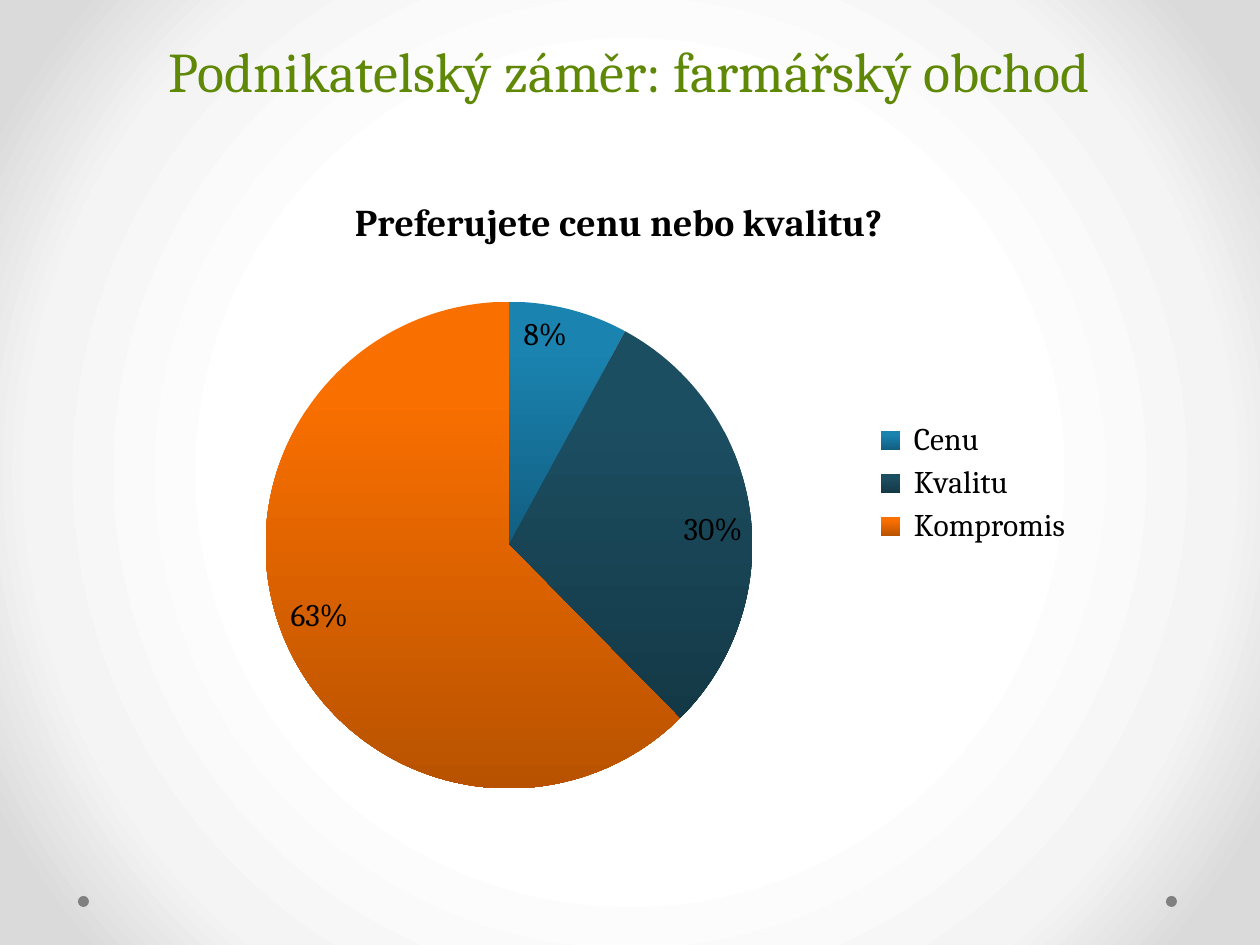
import copy
from dataclasses import dataclass

import pptx
import pptx.chart.data
import pptx.dml.color
import pptx.enum.chart
import pptx.enum.shapes
import pptx.enum.text
import pptx.oxml
import pptx.oxml.ns
import pptx.util

PX = 914400 // 126


@dataclass(frozen=True)
class Theme:
    font: str = "Cambria"
    green: str = "5E8805"
    black: str = "000000"
    grey: str = "808080"
    back: tuple = ((50, "FFFFFF"), (76, "F4F4F4"), (92, "DADADA"))
    # Top colour, bottom colour, and where the blend starts
    slices: tuple = (
        ("1A83B0", "125E80", 0.2),
        ("1C4E62", "143946", 0.2),
        ("F96F00", "B85200", 0.2),
    )
    head: float = 32
    title: float = 21.6
    body: float = 18


THEME = Theme()


def px(*nums):
    return [pptx.util.Emu(num * PX) for num in nums]


def rgb(code):
    return pptx.dml.color.RGBColor.from_string(code)


def style(font, size, color=THEME.black, bold=False):
    font.name = THEME.font
    font.size = pptx.util.Pt(size)
    font.bold = bold
    font.color.rgb = rgb(color)


def write(frame, text, size, lead=None, **form):
    """Put one centred line of text in a frame."""
    para = frame.paragraphs[0]
    para.alignment = pptx.enum.text.PP_ALIGN.CENTER
    if lead:
        para.line_spacing = pptx.util.Pt(lead)
    run = para.add_run()
    run.text = text
    style(run.font, size, **form)


def paint_back(slide):
    """Fill the background with rings around the centre."""
    fill = slide.background.fill
    fill.gradient()
    grad = slide.element.find(".//" + pptx.oxml.ns.qn("a:gradFill"))
    stops = grad.find(pptx.oxml.ns.qn("a:gsLst"))
    stops.append(copy.deepcopy(stops[0]))
    for stop, (place, color) in zip(fill.gradient_stops, THEME.back):
        stop.position = place / 100
        stop.color.rgb = rgb(color)
    line = grad.find(pptx.oxml.ns.qn("a:lin"))
    grad.replace(line, pptx.oxml.parse_xml(
        f'<a:path {pptx.oxml.ns.nsdecls("a")} path="circle">'
        '<a:fillToRect l="50000" t="50000" r="50000" b="50000"/></a:path>'))


def add_dot(slide, left, top, size):
    kind = pptx.enum.shapes.MSO_SHAPE.OVAL
    dot = slide.shapes.add_shape(kind, *px(left, top, size, size))
    dot.shadow.inherit = False
    dot.fill.solid()
    dot.fill.fore_color.rgb = rgb(THEME.grey)
    dot.line.fill.background()


def add_head(slide, text, box):
    frame = slide.shapes.add_textbox(*px(*box)).text_frame
    frame.word_wrap = True
    frame.vertical_anchor = pptx.enum.text.MSO_ANCHOR.BOTTOM
    write(frame, text, THEME.head, lead=58, color=THEME.green)


def place(node, inner=False, **spots):
    """Set a chart part's place as shares of the chart."""
    old = node.find(pptx.oxml.ns.qn("c:layout"))
    if old is not None:
        node.remove(old)
    rows = '<c:layoutTarget val="inner"/>' if inner else ""
    rows += '<c:xMode val="edge"/><c:yMode val="edge"/>'
    rows += "".join(f'<c:{key} val="{num}"/>' for key, num in spots.items())
    layout = pptx.oxml.parse_xml(
        f'<c:layout {pptx.oxml.ns.nsdecls("c")}>'
        f'<c:manualLayout>{rows}</c:manualLayout></c:layout>')
    text = node.find(pptx.oxml.ns.qn("c:tx"))
    node.insert(0 if text is None else 1, layout)


def add_pie(slide, title, parts, box):
    data = pptx.chart.data.CategoryChartData()
    data.categories = list(parts)
    data.add_series(title, list(parts.values()))
    kinds = pptx.enum.chart
    chart = slide.shapes.add_chart(
        kinds.XL_CHART_TYPE.PIE, *px(*box), data).chart
    style(chart.font, THEME.body)

    # Title and legend
    chart.has_title = True
    write(chart.chart_title.text_frame, title, THEME.title, bold=True)
    chart.has_legend = True
    chart.legend.position = kinds.XL_LEGEND_POSITION.RIGHT
    chart.legend.include_in_layout = False
    style(chart.legend.font, THEME.body)

    # Slices, shaded from top to bottom
    plot = chart.plots[0]
    plot.vary_by_categories = True
    for num, (top, base, start) in enumerate(THEME.slices):
        form = plot.series[0].points[num].format
        form.line.fill.background()
        form.fill.gradient()
        form.fill.gradient_angle = 270
        pairs = ((start, top), (1, base))
        for stop, (spot, color) in zip(form.fill.gradient_stops, pairs):
            stop.position = spot
            stop.color.rgb = rgb(color)

    # Values are already whole percents
    plot.has_data_labels = True
    labels = plot.data_labels
    labels.show_value = True
    labels.show_percentage = False
    labels.number_format = '0"%"'
    labels.number_format_is_linked = False
    labels.position = kinds.XL_LABEL_POSITION.INSIDE_END
    style(labels.font, THEME.body)

    area = chart.element.find(".//" + pptx.oxml.ns.qn("c:plotArea"))
    place(area, inner=True, x=0.13, y=0.22, w=0.52, h=0.75)
    place(chart.element.find(".//" + pptx.oxml.ns.qn("c:title")),
          x=0.22, y=0.05)


def main():
    deck = pptx.Presentation()
    deck.slide_width, deck.slide_height = px(1260, 945)
    slide = deck.slides.add_slide(deck.slide_layouts[6])
    paint_back(slide)
    for left in (1166, 78):
        add_dot(slide, left, 896, 11)
    add_head(slide, "Podnikatelský záměr: farmářský obchod",
             (63, -110, 1134, 220))
    add_pie(slide, "Preferujete cenu nebo kvalitu?",
            {" Cenu": 8, " Kvalitu": 30, " Kompromis": 63},
            (140, 159, 946, 649))
    deck.save("out.pptx")


if __name__ == "__main__":
    main()
